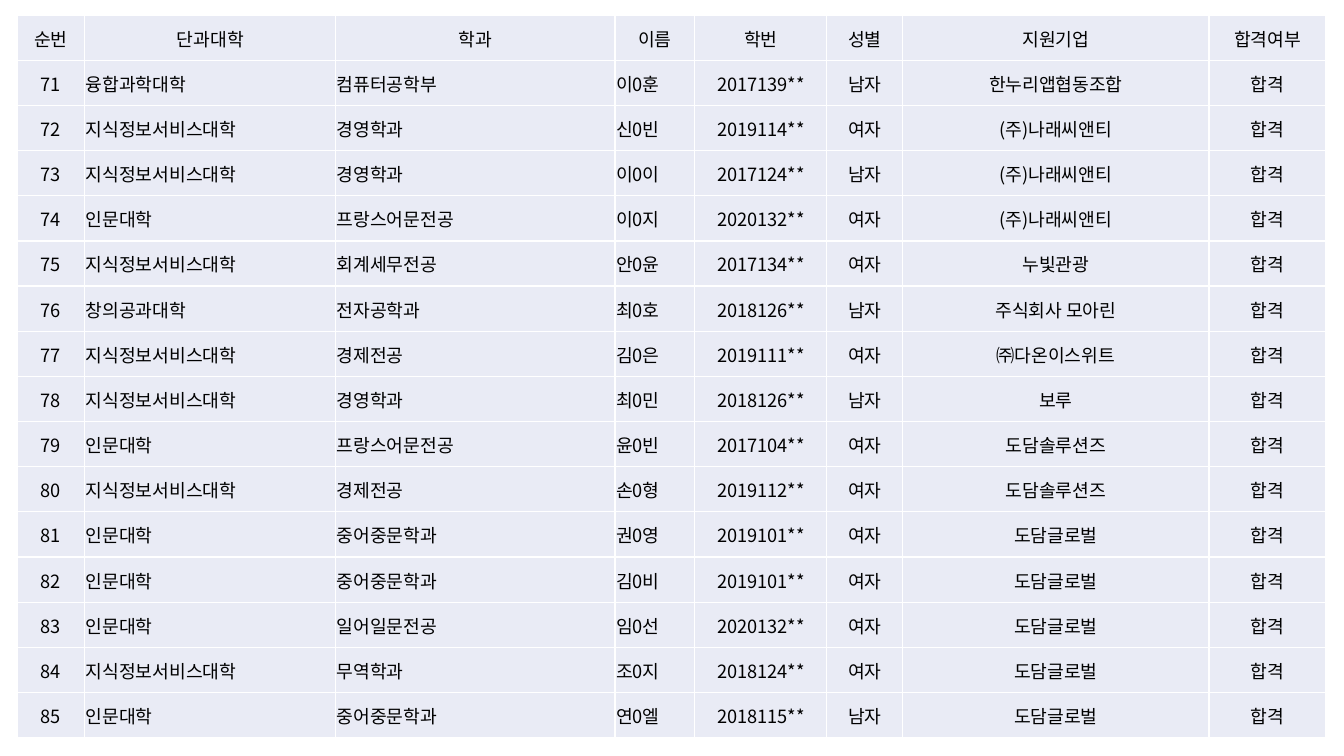
from typing import NamedTuple

from lxml.etree import SubElement
from pptx import Presentation
from pptx.dml.color import RGBColor
from pptx.enum.text import MSO_ANCHOR as Anchor, PP_ALIGN as Align
from pptx.oxml.ns import qn
from pptx.table import _Cell as Cell
from pptx.util import Inches, Pt

COLORS = {"cell": "E9EBF5", "border": "FFFFFF", "text": "000000"}
FONT = "Noto Sans CJK KR"
FIRST_NUMBER = 71
PASSED = "합격"


class Column(NamedTuple):
    heading: str
    width: float  # percent of the slide's width
    align: Align = Align.CENTER


class Applicant(NamedTuple):
    college: str
    department: str
    name: str
    student_id: str
    gender: str
    company: str


COLUMNS = [
    Column("순번", 5.03),
    Column("단과대학", 18.68, Align.LEFT),
    Column("학과", 20.78, Align.LEFT),
    Column("이름", 5.93, Align.LEFT),
    Column("학번", 9.83),
    Column("성별", 5.63),
    Column("지원기업", 22.81),
    Column("합격여부", 8.7),
]

KNOWLEDGE, HUMANITIES = "지식정보서비스대학", "인문대학"
APPLICANTS = [
    Applicant("융합과학대학", "컴퓨터공학부", "이0훈", "2017139**", "남자", "한누리앱협동조합"),
    Applicant(KNOWLEDGE, "경영학과", "신0빈", "2019114**", "여자", "(주)나래씨앤티"),
    Applicant(KNOWLEDGE, "경영학과", "이0이", "2017124**", "남자", "(주)나래씨앤티"),
    Applicant(HUMANITIES, "프랑스어문전공", "이0지", "2020132**", "여자", "(주)나래씨앤티"),
    Applicant(KNOWLEDGE, "회계세무전공", "안0윤", "2017134**", "여자", "누빛관광"),
    Applicant("창의공과대학", "전자공학과", "최0호", "2018126**", "남자", "주식회사 모아린"),
    Applicant(KNOWLEDGE, "경제전공", "김0은", "2019111**", "여자", "㈜다온이스위트"),
    Applicant(KNOWLEDGE, "경영학과", "최0민", "2018126**", "남자", "보루"),
    Applicant(HUMANITIES, "프랑스어문전공", "윤0빈", "2017104**", "여자", "도담솔루션즈"),
    Applicant(KNOWLEDGE, "경제전공", "손0형", "2019112**", "여자", "도담솔루션즈"),
    Applicant(HUMANITIES, "중어중문학과", "권0영", "2019101**", "여자", "도담글로벌"),
    Applicant(HUMANITIES, "중어중문학과", "김0비", "2019101**", "여자", "도담글로벌"),
    Applicant(HUMANITIES, "일어일문전공", "임0선", "2020132**", "여자", "도담글로벌"),
    Applicant(KNOWLEDGE, "무역학과", "조0지", "2018124**", "여자", "도담글로벌"),
    Applicant(HUMANITIES, "중어중문학과", "연0엘", "2018115**", "남자", "도담글로벌"),
]


def add_borders(cell: Cell) -> None:
    properties = cell._tc.get_or_add_tcPr()
    for side in ("a:lnL", "a:lnR", "a:lnT", "a:lnB"):
        line = SubElement(properties, qn(side), w=str(Pt(1)))
        fill = SubElement(line, qn("a:solidFill"))
        SubElement(fill, qn("a:srgbClr"), val=COLORS["border"])


def fill_cell(cell: Cell, text: str, align: Align) -> None:
    add_borders(cell)
    cell.fill.solid()
    cell.fill.fore_color.rgb = RGBColor.from_string(COLORS["cell"])
    cell.vertical_anchor = Anchor.MIDDLE
    cell.margin_left = cell.margin_top = cell.margin_right = Inches(0.01)
    cell.margin_bottom = 0

    paragraph = cell.text_frame.paragraphs[0]
    paragraph.alignment = align
    run = paragraph.add_run()
    run.text = text
    run.font.size = Pt(13)
    run.font.color.rgb = RGBColor.from_string(COLORS["text"])
    run.font.name = FONT
    # Hangul takes the East Asian typeface
    SubElement(run._r.get_or_add_rPr(), qn("a:ea"), typeface=FONT)


def main() -> None:
    deck = Presentation()
    deck.slide_width, deck.slide_height = Inches(13.33), Inches(7.5)
    slide = deck.slides.add_slide(deck.slide_layouts[6])

    def across(percent: float) -> int:
        return int(deck.slide_width * percent / 100)

    def down(percent: float) -> int:
        return int(deck.slide_height * percent / 100)

    # Table grid
    row_count = len(APPLICANTS) + 1
    table_height = down(95.6)
    table = slide.shapes.add_table(
        row_count, len(COLUMNS), across(1.28), down(2),
        across(sum(column.width for column in COLUMNS)), table_height,
    ).table
    table.first_row = table.horz_banding = False
    for grid_column, column in zip(table.columns, COLUMNS):
        grid_column.width = across(column.width)
    for grid_row in table.rows:
        grid_row.height = table_height // row_count

    # Headings
    for index, column in enumerate(COLUMNS):
        fill_cell(table.cell(0, index), column.heading, Align.CENTER)

    # Applicants
    for row, applicant in enumerate(APPLICANTS, start=1):
        values = (str(FIRST_NUMBER + row - 1), *applicant, PASSED)
        for index, (column, value) in enumerate(zip(COLUMNS, values)):
            fill_cell(table.cell(row, index), value, column.align)

    deck.save("out.pptx")


if __name__ == "__main__":
    main()
